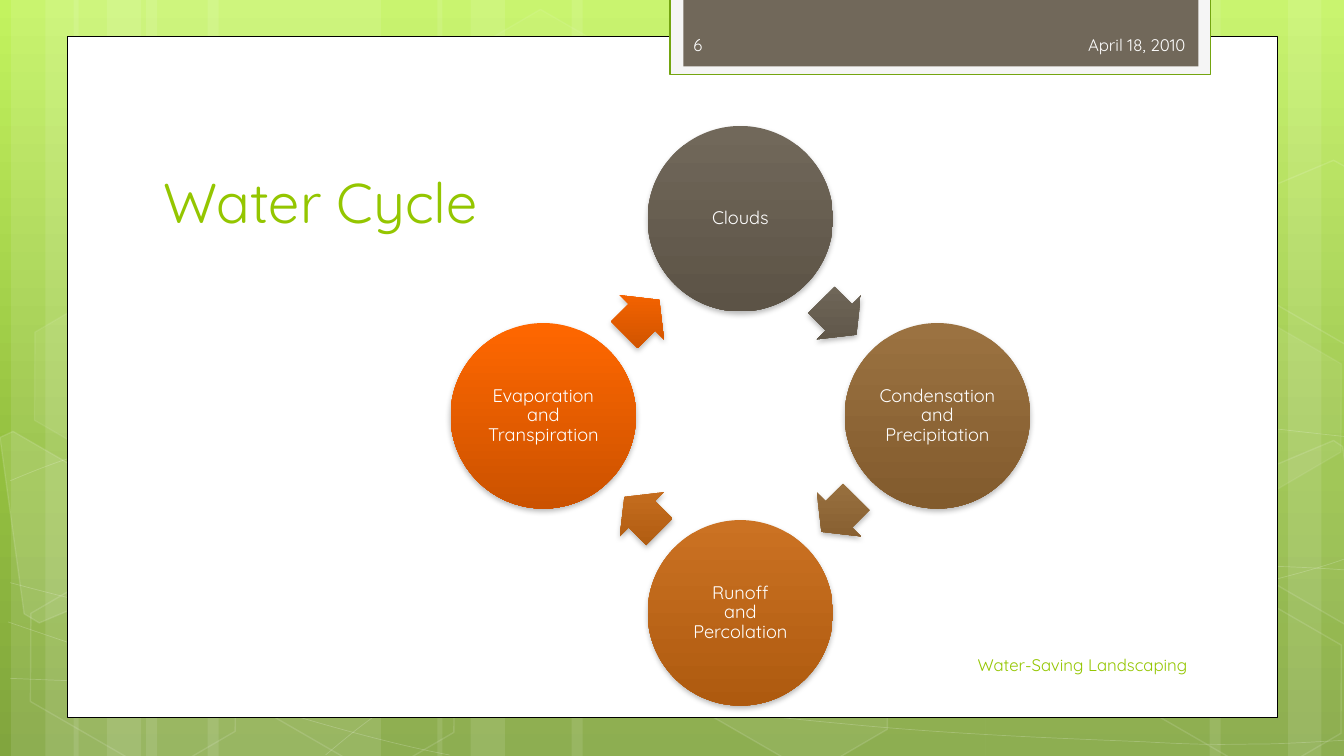
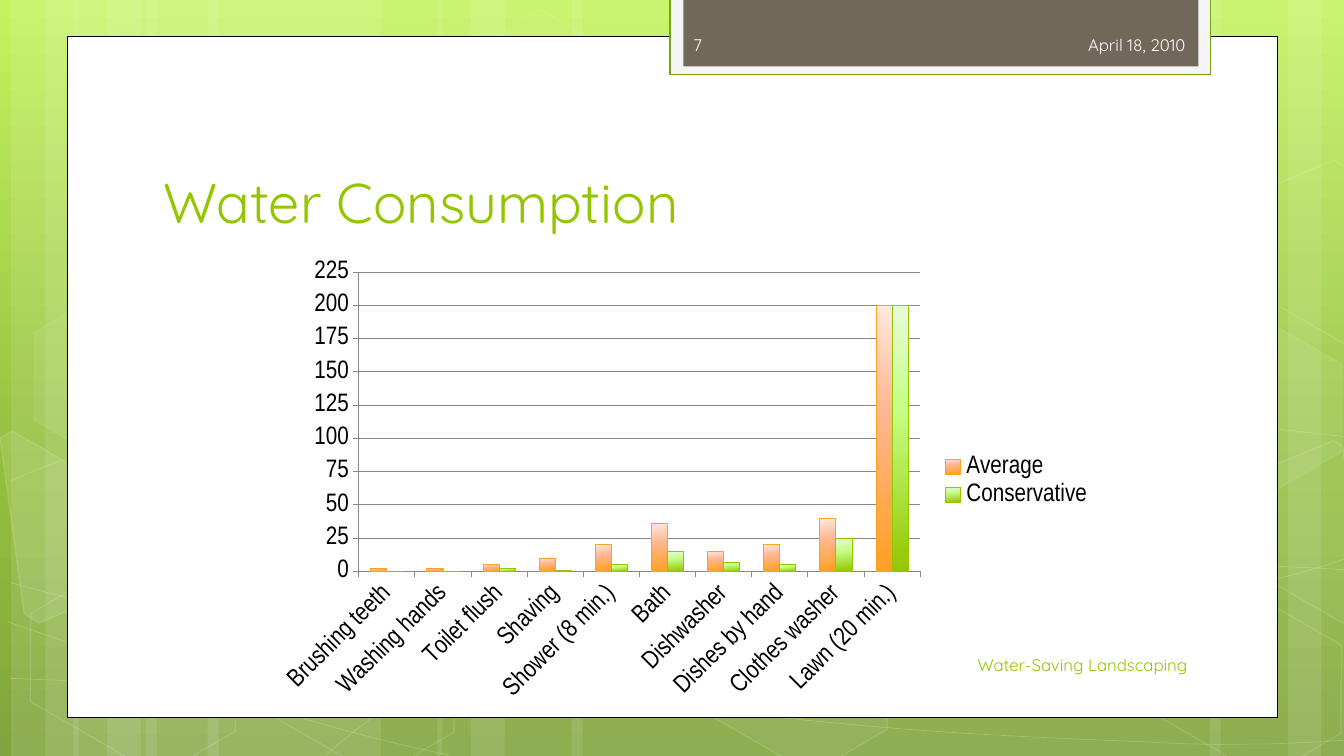
import dataclasses
import math

import lxml.etree
import pptx
import pptx.chart.data
import pptx.dml.color
import pptx.enum.chart
import pptx.enum.shapes
import pptx.enum.text
import pptx.oxml.ns
import pptx.util

EMU_PER_PX = 9144
SHAPE = pptx.enum.shapes.MSO_SHAPE
ALIGN = pptx.enum.text.PP_ALIGN
ANCHOR = pptx.enum.text.MSO_ANCHOR
TICK = pptx.enum.chart.XL_TICK_MARK
qn = pptx.oxml.ns.qn


@dataclasses.dataclass(frozen=True)
class Theme:
    font: str = "Quicksand"
    chart_font: str = "Arial Narrow"
    title_size: int = 40
    chart_size: int = 18
    node_size: int = 13
    small_size: int = 12
    white: str = "FFFFFF"
    black: str = "000000"
    green: str = "94C600"
    frame: str = "F5F5F5"
    frame_line: str = "74A510"
    band: str = "71685A"
    band_text: str = "FEFEFE"
    grid: str = "888888"
    backdrop: tuple = ((0, "C3F35F"), (62, "93BF3F"), (100, "81A53E"))
    cycle: tuple = (("71685A", "5C5346"), ("9B7241", "825B2D"),
                    ("CB7223", "AE5A0F"), ("FF6700", "CB5200"))
    bars: tuple = (
        ("FEA022", ((0, "FFE9DE"), (40, "FFB78F"), (100, "FFA021"))),
        ("94C600", ((0, "EAF9DA"), (40, "C4FF82"), (100, "94C600"))),
    )


@dataclasses.dataclass(frozen=True)
class Box:
    left: int
    top: int
    width: int
    height: int

    def inner(self, left, top, width, height):
        return Box(self.left + left, self.top + top, width, height)

    def emu(self):
        return [emu(side) for side in (self.left, self.top, self.width, self.height)]


THEME = Theme()
PAGE = Box(0, 0, 1333, 750)
PAPER = Box(67, 36, 1200, 676)

STRIPES = ((145, 233), (11, 67), (45, 111), (206, 233), (73, 67), (106, 111),
           (978, 233), (1278, 67), (1200, 111), (567, 411), (434, 67), (467, 111))
CURVES = (
    ((10, 673), (82, 676), (154, 679), (254, 678), (354, 677), (477, 675), (610, 665),
     (744, 655), (933, 636), (1055, 617), (1178, 598), (1303, 568), (1343, 551)),
    ((10, 477), (48, 461), (86, 446), (162, 431), (238, 416), (345, 394), (463, 387),
     (582, 380), (725, 379), (872, 387), (1019, 395), (1263, 426), (1343, 434)),
    ((8, 617), (169, 672), (330, 727), (446, 749)),
    ((10, 578), (51, 589), (93, 600), (171, 616), (248, 631), (364, 656), (475, 673),
     (586, 690), (727, 708), (837, 718), (948, 729), (1066, 733), (1137, 736),
     (1207, 740), (1225, 738), (1260, 738), (1294, 737), (1319, 735), (1343, 734)),
    ((323, 749), (347, 729), (370, 709), (403, 691), (435, 673), (480, 653), (517, 639),
     (554, 625), (577, 619), (626, 609), (675, 599), (765, 585), (811, 578),
     (858, 571), (865, 571), (907, 569), (948, 566), (1013, 563), (1059, 562),
     (1105, 561), (1182, 562), (1182, 562), (1182, 562), (1270, 562), (1270, 562),
     (1295, 563), (1317, 564), (1341, 566)),
)
HEXAGONS = ((445, 36, 4, 8), (662, 589, 6, 12), (15, 591, 0, 12), (19, 312, 7, 8),
            (232, 592, 0, 12), (1112, 593, 0, 12), (1112, 314, 7, 8))
CUT_HEXAGONS = (
    (10, ((0, 434), (13, 428), (115, 487), (127, 581), (39, 618), (24, 609))),
    (4, ((1235, 474), (1323, 437), (1332, 443), (1357, 625), (1349, 628), (1247, 569))),
    (0, ((1235, 196), (1323, 159), (1334, 165), (1357, 346), (1349, 350), (1247, 291))),
)
STAGES = ("Clouds", "Condensation\nand\nPrecipitation", "Runoff\nand\nPercolation",
          "Evaporation\nand\nTranspiration")
CONSUMPTION = (
    ("Brushing teeth", 2, 0), ("Washing hands", 2, 0), ("Toilet flush", 5, 2),
    ("Shaving", 10, 1), ("Shower (8 min.)", 20, 5), ("Bath", 36, 15),
    ("Dishwasher", 15, 7), ("Dishes by hand", 20, 5), ("Clothes washer", 40, 25),
    ("Lawn (20 min.)", 200, 200),
)


def emu(px):
    return round(px * EMU_PER_PX)


def rgb(color):
    return pptx.dml.color.RGBColor.from_string(color)


def add_element(parent, tag, **attributes):
    return lxml.etree.SubElement(parent, qn(tag), **attributes)


def set_alpha(holder, percent):
    for color in holder.iter(qn("a:srgbClr")):
        add_element(color, "a:alpha", val=str(percent * 1000))


def set_gradient(fill, owner, stops, angle=90):
    fill.gradient()
    gradient = next(owner.iter(qn("a:gradFill")))
    gradient.set("rotWithShape", "0")
    stop_list = gradient.find(qn("a:gsLst"))
    for stop in list(stop_list):
        stop_list.remove(stop)
    for position, color in stops:
        stop = add_element(stop_list, "a:gs", pos=str(position * 1000))
        add_element(stop, "a:srgbClr", val=color)
    gradient.find(qn("a:lin")).set("ang", str(angle * 60000))


def paint(shape, fill=None, line=None, weight=1, fill_alpha=100, line_alpha=100):
    shape.shadow.inherit = False
    properties = shape._element.spPr
    if fill and fill_alpha:
        shape.fill.solid()
        shape.fill.fore_color.rgb = rgb(fill)
        if fill_alpha < 100:
            set_alpha(properties.find(qn("a:solidFill")), fill_alpha)
    else:
        shape.fill.background()
    if line:
        shape.line.color.rgb = rgb(line)
        shape.line.width = pptx.util.Pt(weight)
        if line_alpha < 100:
            set_alpha(properties.find(qn("a:ln")), line_alpha)
    else:
        shape.line.fill.background()


def add_panel(page, box, kind=SHAPE.RECTANGLE, **look):
    shape = page.shapes.add_shape(kind, *box.emu())
    paint(shape, **look)
    return shape


def add_outline(page, box, points, close, **look):
    corners = [(emu(box.left + x), emu(box.top + y)) for x, y in points]
    builder = page.shapes.build_freeform(*corners[0], scale=1.0)
    builder.add_line_segments(corners[1:], close=close)
    shape = builder.convert_to_shape()
    paint(shape, **look)
    return shape


def bend(shape):
    lines = list(shape._element.iter(qn("a:lnTo")))
    for start in range(0, len(lines), 3):
        curve = lxml.etree.Element(qn("a:cubicBezTo"))
        lines[start].addprevious(curve)
        for line in lines[start:start + 3]:
            curve.append(line[0])
            line.getparent().remove(line)


def write(shape, text, size, color, align=ALIGN.LEFT, anchor=ANCHOR.MIDDLE):
    frame = shape.text_frame
    frame.word_wrap = True
    frame.vertical_anchor = anchor
    para = frame.paragraphs[0]
    para.text = text
    para.alignment = align
    for span in para.runs:
        span.font.name = THEME.font
        span.font.size = pptx.util.Pt(size)
        span.font.color.rgb = rgb(color)
    for line_break in para._p.iter(qn("a:br")):
        add_element(line_break, "a:rPr", sz=str(size * 100))
    return frame


def add_label(page, box, text, size, color, **layout):
    write(page.shapes.add_textbox(*box.emu()), text, size, color, **layout)


def draw_backdrop(page, box):
    for left, width in STRIPES:
        add_panel(page, box.inner(left, 0, width, box.height), fill=THEME.white, fill_alpha=10)
    for knots in CURVES:
        bend(add_outline(page, box, knots, False,
                         line=THEME.white, weight=0.5, line_alpha=20))
    for left, top, fill_alpha, line_alpha in HEXAGONS:
        hexagon = add_panel(page, box.inner(left, top, 234, 152), SHAPE.HEXAGON,
                            fill=THEME.white, fill_alpha=fill_alpha,
                            line=THEME.white, line_alpha=line_alpha)
        hexagon.adjustments[0] = 0.285
        hexagon.rotation = 30
    for fill_alpha, corners in CUT_HEXAGONS:
        add_outline(page, box, corners, True, fill=THEME.white, fill_alpha=fill_alpha,
                    line=THEME.white, line_alpha=12)


def draw_header(page, box, number):
    add_panel(page, box, fill=THEME.frame, line=THEME.frame_line, weight=1.25)
    band = box.inner(13, 0, box.width - 25, box.height - 8)
    add_panel(page, band, fill=THEME.band)
    add_label(page, band.inner(0, 26, 194, 40), str(number), THEME.small_size, THEME.band_text)
    add_label(page, band.inner(197, 26, 311, 40), "April 18, 2010",
              THEME.small_size, THEME.band_text, align=ALIGN.RIGHT)


def add_page(deck, number, title):
    page = deck.slides.add_slide(deck.slide_layouts[6])
    draw_backdrop(page, PAGE)
    add_panel(page, PAPER, fill=THEME.white, line=THEME.black, weight=0.5)
    draw_header(page, PAPER.inner(598, -38, 536, 76), number)
    add_label(page, PAPER.inner(85, 77, 1024, 125), title,
              THEME.title_size, THEME.green, anchor=ANCHOR.BOTTOM)
    add_label(page, PAPER.inner(610, 604, 511, 40), "Water-Saving Landscaping",
              THEME.small_size, THEME.green, align=ALIGN.RIGHT)
    return page


def add_cycle_part(page, box, kind, colors):
    shape = add_panel(page, box, kind)
    set_gradient(shape.fill, shape._element, ((0, colors[0]), (100, colors[1])))
    effects = shape._element.spPr.find(qn("a:effectLst"))
    shadow = add_element(effects, "a:outerShdw", blurRad="50800", dist="25400",
                         dir="5400000", rotWithShape="0")
    add_element(shadow, "a:srgbClr", val=THEME.black)
    set_alpha(shadow, 28)
    return shape


def draw_cycle(page, box, stages):
    diameter, arrow_width, arrow_height = 184, 49, 62
    orbit = (box.width - diameter) / 2
    turn = 360 / len(stages)

    def centred(angle, distance, width, height):
        x = box.width / 2 + distance * math.sin(math.radians(angle))
        y = box.height / 2 - distance * math.cos(math.radians(angle))
        return box.inner(x - width / 2, y - height / 2, width, height)

    for index, (stage, colors) in enumerate(zip(stages, THEME.cycle)):
        angle = index * turn
        circle = add_cycle_part(page, centred(angle, orbit, diameter, diameter),
                                SHAPE.OVAL, colors)
        frame = write(circle, stage, THEME.node_size, THEME.white, align=ALIGN.CENTER)
        frame.margin_left = frame.margin_right = emu(2)
        frame.margin_top = frame.margin_bottom = emu(2)
        frame.paragraphs[0].line_spacing = 0.9
        midway = angle + turn / 2
        arrow = add_cycle_part(
            page, centred(midway, orbit * math.cos(math.radians(turn / 2)),
                          arrow_width, arrow_height), SHAPE.RIGHT_ARROW, colors)
        arrow.adjustments[0] = 0.6
        arrow.rotation = midway


def set_font(font):
    font.name = THEME.chart_font
    font.size = pptx.util.Pt(THEME.chart_size)
    font.color.rgb = rgb(THEME.black)


def place_plot(chart, **fractions):
    area = next(chart._chartSpace.iter(qn("c:plotArea")))
    for old in area.findall(qn("c:layout")):
        area.remove(old)
    layout = lxml.etree.Element(qn("c:layout"))
    area.insert(0, layout)
    manual = add_element(layout, "c:manualLayout")
    add_element(manual, "c:layoutTarget", val="inner")
    for side in "xy":
        add_element(manual, f"c:{side}Mode", val="edge")
    for side, fraction in fractions.items():
        add_element(manual, f"c:{side}", val=str(fraction))


def draw_consumption(page, box, rows):
    names, average, conservative = zip(*rows)
    data = pptx.chart.data.CategoryChartData()
    data.categories = names
    data.add_series("Average", average)
    data.add_series("Conservative", conservative)
    kind = pptx.enum.chart.XL_CHART_TYPE.COLUMN_CLUSTERED
    chart = page.shapes.add_chart(kind, *box.emu(), data).chart
    set_font(chart.font)
    chart.has_title = False
    chart.has_legend = True
    chart.legend.position = pptx.enum.chart.XL_LEGEND_POSITION.RIGHT
    chart.legend.include_in_layout = False
    set_font(chart.legend.font)
    plot = chart.plots[0]
    plot.gap_width = 150
    plot.overlap = 0
    plot.vary_by_categories = False
    for series, (line, stops) in zip(plot.series, THEME.bars):
        set_gradient(series.format.fill, series._element, stops, 84)
        series.format.line.color.rgb = rgb(line)
        series.format.line.width = pptx.util.Pt(0.75)
    values, categories = chart.value_axis, chart.category_axis
    values.minimum_scale, values.maximum_scale, values.major_unit = 0, 225, 25
    values.has_major_gridlines = True
    for axis in (values, categories):
        axis.major_tick_mark = TICK.OUTSIDE
        axis.minor_tick_mark = TICK.NONE
        set_font(axis.tick_labels.font)
    for part in (values, categories, values.major_gridlines):
        part.format.line.color.rgb = rgb(THEME.grid)
        part.format.line.width = pptx.util.Pt(0.75)
    next(categories._element.iter(qn("a:bodyPr"))).set("rot", "-2700000")
    place_plot(chart, x=89 / box.width, y=20 / box.height,
               w=557 / box.width, h=297 / box.height)


def main():
    deck = pptx.Presentation()
    deck.slide_width, deck.slide_height = pptx.util.Emu(12192000), emu(PAGE.height)
    master = deck.slide_master
    set_gradient(master.background.fill, master.element, THEME.backdrop)
    draw_cycle(add_page(deck, 6, "Water Cycle"), PAPER.inner(380, 89, 575, 575), STAGES)
    draw_consumption(add_page(deck, 7, "Water Consumption"),
                     PAPER.inner(200, 214, 828, 454), CONSUMPTION)
    deck.save("out.pptx")


if __name__ == "__main__":
    main()
